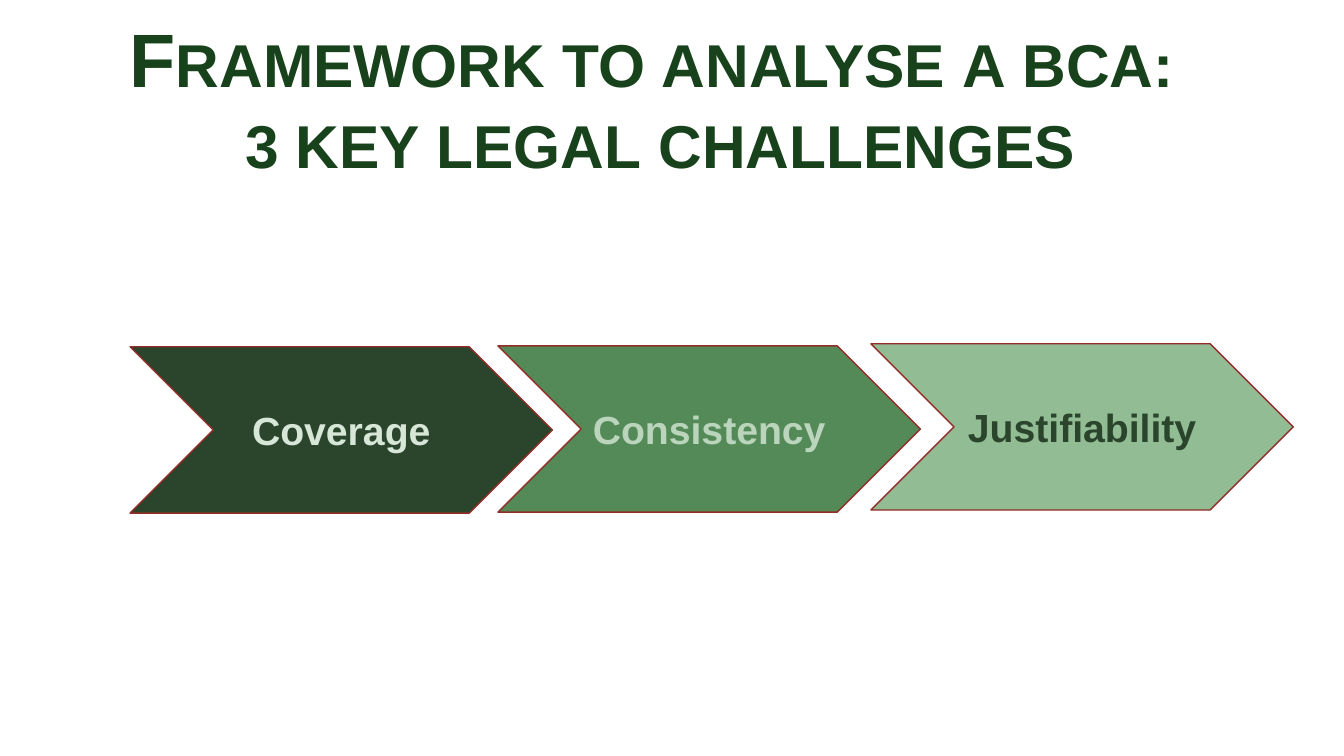
from dataclasses import dataclass

import pptx
import pptx.dml.color
import pptx.enum.shapes
import pptx.enum.text
import pptx.util

Pt = pptx.util.Pt
FONT = "Arial"
TITLE_COLOUR = "18421C"
OUTLINE_COLOUR = "922D27"
CHEVRON_WIDTH = 301.7
CHEVRON_HEIGHT = 118.8


@dataclass(frozen=True)
class Challenge:
    label: str
    left: float
    top: float
    fill: str
    text_colour: str


CHALLENGES = [
    Challenge("Consistency", 355.7, 247, "548A57", "BAD5BC"),
    Challenge("Justifiability", 622.1, 245.5, "91BC94", "2A452C"),
    Challenge("Coverage", 92.9, 247.7, "2A452C", "D6E6D7"),
]


def colour(value: str) -> pptx.dml.color.RGBColor:
    return pptx.dml.color.RGBColor.from_string(value)


def write_centred(box, text: str, size: float, text_colour: str):
    """Fill the box with one bold, centred paragraph and return it."""
    frame = box.text_frame
    frame.word_wrap = True
    frame.vertical_anchor = pptx.enum.text.MSO_ANCHOR.MIDDLE
    frame.text = text
    para = frame.paragraphs[0]
    para.alignment = pptx.enum.text.PP_ALIGN.CENTER
    for span in para.runs:
        span.font.name = FONT
        span.font.size = Pt(size)
        span.font.bold = True
        span.font.color.rgb = colour(text_colour)
    return para


def add_title(page) -> None:
    box = page.shapes.add_textbox(Pt(1.4), Pt(61.9), Pt(940.3), Pt(84.2))
    # The deep bottom inset lifts the two lines above the middle of the box.
    box.text_frame.margin_bottom = Pt(63.4)
    text = "Framework to analyse a bca: \v3 key legal challenges"
    para = write_centred(box, text, 54, TITLE_COLOUR)
    para.line_spacing = 0.9
    for span in para.runs:
        span.font._element.set("cap", "small")


def add_chevron(page, challenge: Challenge) -> None:
    chevron = page.shapes.add_shape(
        pptx.enum.shapes.MSO_SHAPE.CHEVRON,
        Pt(challenge.left), Pt(challenge.top),
        Pt(CHEVRON_WIDTH), Pt(CHEVRON_HEIGHT),
    )
    chevron.shadow.inherit = False
    chevron.fill.solid()
    chevron.fill.fore_color.rgb = colour(challenge.fill)
    chevron.line.color.rgb = colour(OUTLINE_COLOUR)
    chevron.line.width = Pt(1)
    write_centred(chevron, challenge.label, 28, challenge.text_colour)


def main() -> None:
    deck = pptx.Presentation()
    deck.slide_width = Pt(960)
    deck.slide_height = Pt(540)
    page = deck.slides.add_slide(deck.slide_layouts[6])
    add_title(page)
    for challenge in CHALLENGES:
        add_chevron(page, challenge)
    deck.save("out.pptx")


if __name__ == "__main__":
    main()
